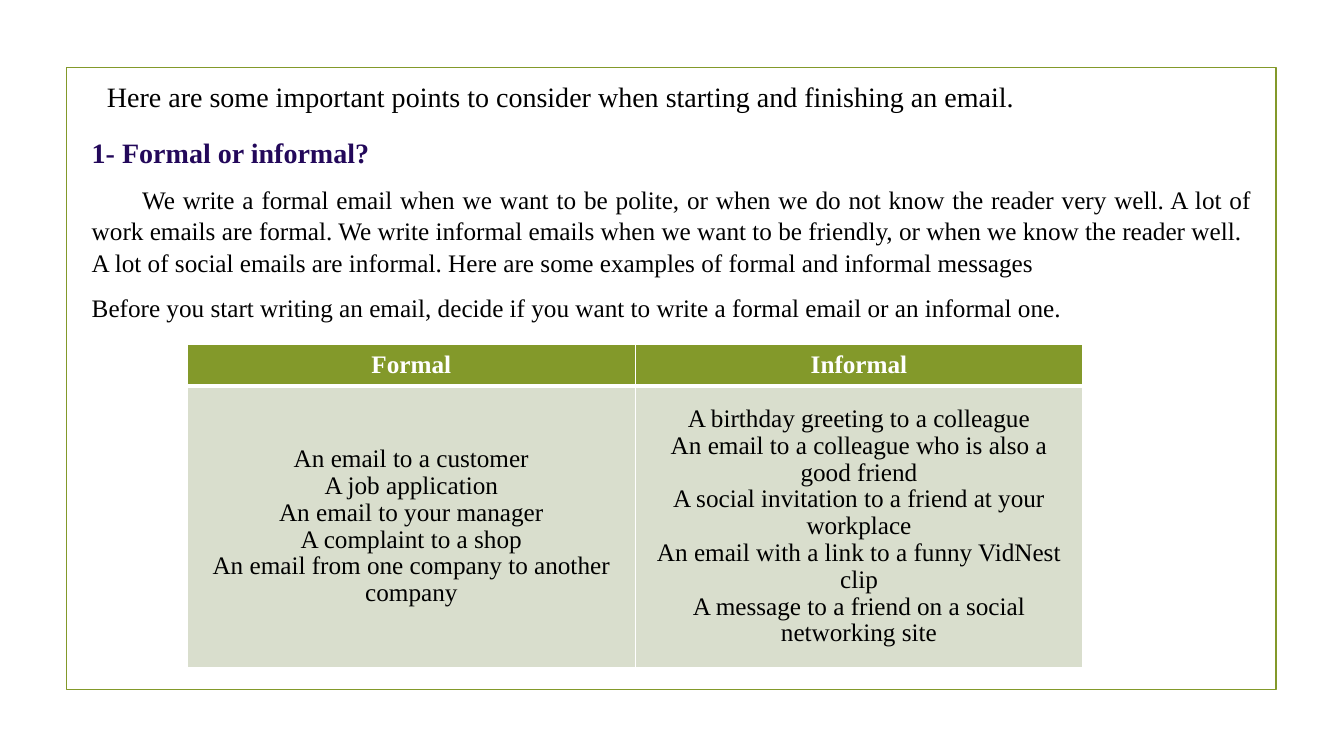
from lxml import etree
from pptx import Presentation
from pptx import util as u
from pptx.dml.color import RGBColor
from pptx.enum import shapes, text
from pptx.oxml.ns import qn

FONT = "Times New Roman"
GREEN, PALE, PURPLE, BLACK, WHITE = "83992A", "D9DECD", "23085A", "000000", "FFFFFF"

INTRO = "Here are some important points to consider when starting and finishing an email."
HEADING = "1- Formal or informal?"
ADVICE = [
    "\tWe write a formal email when we want to be polite, or when we do not know the "
    "reader very well. A lot of work emails are formal. We write informal emails when we "
    "want to be friendly, or when we know the reader well. \tA lot of social emails are "
    "informal. Here are some examples of formal and informal messages",
    "Before you start writing an email, decide if you want to write a formal email or an "
    "informal one.",
]
EXAMPLES = {
    "Formal": [
        "An email to a customer",
        "A job application",
        "An email to your manager",
        "A complaint to a shop",
        "An email from one company to another company",
    ],
    "Informal": [
        "A birthday greeting to a colleague",
        "An email to a colleague who is also a good friend",
        "A social invitation to a friend at your workplace",
        "An email with a link to a funny VidNest clip",
        "A message to a friend on a social networking site",
    ],
}


def color(value):
    return RGBColor.from_string(value)


def set_attributes(target, values):
    for name, value in values.items():
        setattr(target, name, value)


def place(shape, box):
    names = ("left", "top", "width", "height")
    set_attributes(shape, dict(zip(names, map(u.Inches, box))))


def write(paragraph, words, size=18, ink=BLACK, bold=False, **layout):
    run = paragraph.add_run()
    run.text = words
    set_attributes(run.font, {"name": FONT, "size": u.Pt(size), "bold": bold})
    run.font.color.rgb = color(ink)
    set_attributes(paragraph, {"space_before": u.Pt(0), **layout})


def remove_bullet(paragraph, tab):
    """Drop the bullet and its indent, and set one tab stop."""
    properties = paragraph._p.get_or_add_pPr()
    properties.set("marL", "0")
    properties.set("indent", "0")
    etree.SubElement(properties, qn("a:buNone"))
    stops = etree.SubElement(properties, qn("a:tabLst"))
    etree.SubElement(stops, qn("a:tab"), pos=str(u.Inches(tab)), algn="l")


def set_borders(cell, bottom):
    properties = cell._tc.get_or_add_tcPr()
    for side, width in {"L": 1, "R": 1, "T": 1, "B": bottom}.items():
        line = etree.SubElement(properties, qn(f"a:ln{side}"), w=str(u.Pt(width)))
        fill = etree.SubElement(line, qn("a:solidFill"))
        etree.SubElement(fill, qn("a:srgbClr"), val=WHITE)


def add_frame(slide, box):
    frame = slide.shapes.add_shape(shapes.MSO_SHAPE.RECTANGLE, *map(u.Inches, box))
    frame.shadow.inherit = False
    frame.fill.background()
    frame.line.color.rgb = color(GREEN)
    frame.line.width = u.Pt(1.25)


def fill_intro(slide, box):
    title = slide.shapes.title
    place(title, box)
    set_attributes(title.text_frame, {
        "word_wrap": True,
        "auto_size": text.MSO_AUTO_SIZE.NONE,
        "vertical_anchor": text.MSO_ANCHOR.MIDDLE,
    })
    write(title.text_frame.paragraphs[0], INTRO, 20, alignment=text.PP_ALIGN.LEFT)


def fill_advice(slide, box):
    body = slide.placeholders[1]
    place(body, box)
    frame = body.text_frame
    set_attributes(frame, {
        "word_wrap": True,
        "auto_size": text.MSO_AUTO_SIZE.NONE,
        "vertical_anchor": text.MSO_ANCHOR.TOP,
    })
    for index, words in enumerate([HEADING, *ADVICE]):
        paragraph = frame.add_paragraph() if index else frame.paragraphs[0]
        remove_bullet(paragraph, tab=0.5)
        look = {} if index else {"size": 20, "ink": PURPLE, "bold": True}
        write(paragraph, words, **look, alignment=text.PP_ALIGN.JUSTIFY,
              line_spacing=1.05, space_after=u.Pt(9.4))


def fill_cell(cell, lines, background, bottom=1, **look):
    set_borders(cell, bottom)
    cell.fill.solid()
    cell.fill.fore_color.rgb = color(background)
    cell.vertical_anchor = text.MSO_ANCHOR.MIDDLE
    for index, words in enumerate(lines):
        frame = cell.text_frame
        paragraph = frame.add_paragraph() if index else frame.paragraphs[0]
        write(paragraph, words, **look, alignment=text.PP_ALIGN.CENTER, line_spacing=0.96)


def add_examples(slide, box, header_height=0.41):
    table = slide.shapes.add_table(2, len(EXAMPLES), *map(u.Inches, box)).table
    table.rows[0].height = u.Inches(header_height)
    table.rows[1].height = u.Inches(box[3] - header_height)
    for column, (heading, examples) in enumerate(EXAMPLES.items()):
        fill_cell(table.cell(0, column), [heading], GREEN, bottom=3, ink=WHITE, bold=True)
        fill_cell(table.cell(1, column), examples, PALE)


def build_email_slide(presentation):
    slide = presentation.slides.add_slide(presentation.slide_layouts[1])
    add_frame(slide, (0.66, 0.67, 12, 6.17))
    fill_intro(slide, (0.96, 0.74, 10.29, 0.44))
    fill_advice(slide, (0.81, 1.28, 11.71, 2.1))
    add_examples(slide, (1.86, 3.42, 8.88, 3.2))


def main():
    presentation = Presentation()
    presentation.slide_width = u.Inches(13.33)
    presentation.slide_height = u.Inches(7.5)
    build_email_slide(presentation)
    presentation.save("out.pptx")


if __name__ == "__main__":
    main()
